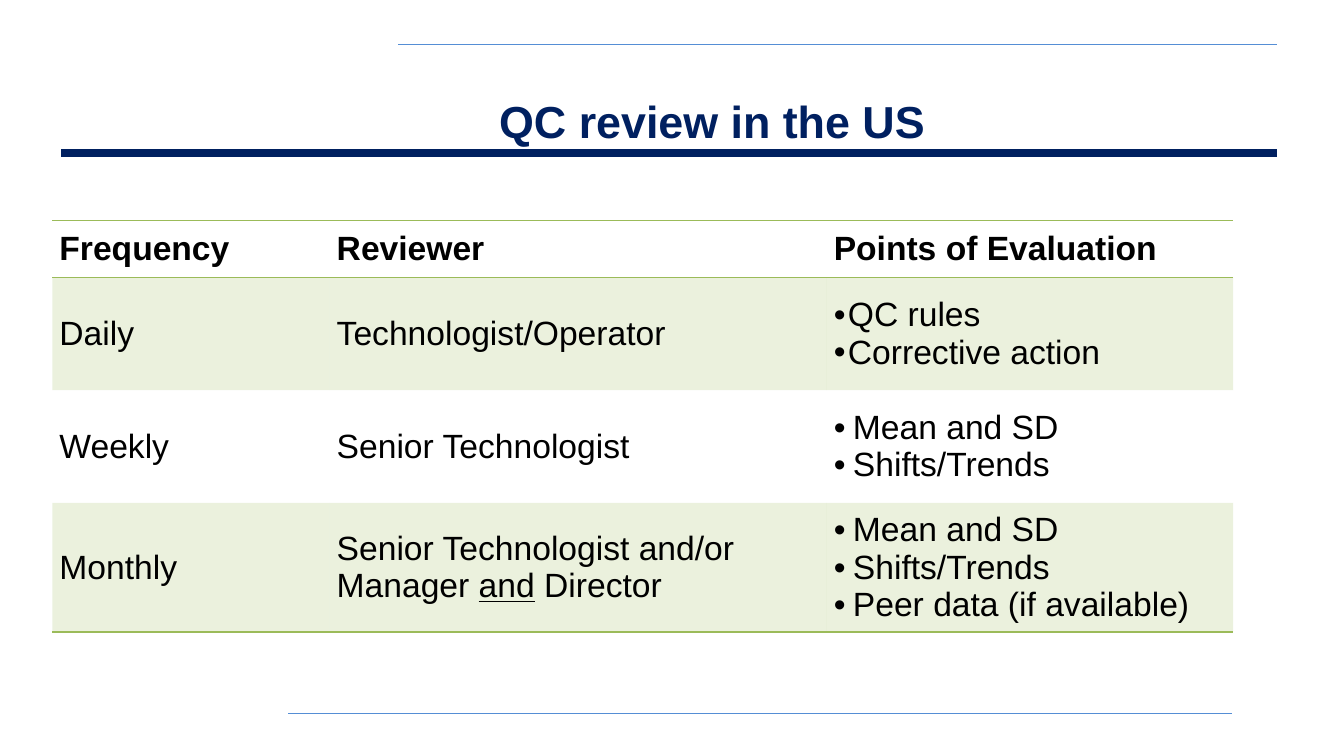
import pptx
import pptx.util
import pptx.dml.color
import pptx.enum.shapes
import pptx.enum.text
import pptx.oxml
import pptx.oxml.ns
import lxml.etree

Inches = pptx.util.Inches
Pt = pptx.util.Pt
qn = pptx.oxml.ns.qn
MIDDLE = pptx.enum.text.MSO_ANCHOR.MIDDLE
GREEN = "9BBB59"


def color(code):
    return pptx.dml.color.RGBColor.from_string(code)


def style(run, size, code, bold, under=False):
    form = {"name": "Arial", "size": Pt(size), "bold": bold, "underline": under}
    for key, value in form.items():
        setattr(run.font, key, value)
    run.font.color.rgb = color(code)


deck = pptx.Presentation()
deck.slide_width = Inches(13.33)
deck.slide_height = Inches(7.5)
slide = deck.slides.add_slide(deck.slide_layouts[6])

# Rules: left, right, height, colour, width
rules = [
    (2.86, 12.22, 7.08, "558ED5", 0.5),
    (3.95, 12.67, 0.44, "558ED5", 0.5),
    (0.61, 12.67, 1.52, "002060", 6),
]
for left, right, y, code, width in rules:
    rule = slide.shapes.add_connector(
        pptx.enum.shapes.MSO_CONNECTOR.STRAIGHT,
        Inches(left), Inches(y), Inches(right), Inches(y))
    rule.line.color.rgb = color(code)
    rule.line.width = Pt(width)
    lxml.etree.SubElement(rule._element.spPr, qn("a:effectLst"))

# Title
box = slide.shapes.add_textbox(Inches(3.1), Inches(0.83), Inches(7.93), Inches(0.82))
frame = box.text_frame
frame.word_wrap = True
frame.margin_top = Inches(0.1)
title = frame.paragraphs[0]
title.alignment = pptx.enum.text.PP_ALIGN.CENTER
run = title.add_run()
run.text = "QC review in the US"
style(run, 32, "002060", True)

# Table text: one list per cell in the last column, _ marks underlining
rows = [
    ("Frequency", "Reviewer", ["Points of Evaluation"]),
    ("Daily", "Technologist/Operator", ["QC rules", "Corrective action"]),
    ("Weekly", "Senior Technologist", ["Mean and SD", "Shifts/Trends"]),
    ("Monthly", "Senior Technologist and/or Manager _and_ Director",
     ["Mean and SD", "Shifts/Trends", "Peer data (if available)"]),
]
widths = [2.75, 4.93, 4.03]
heights = [0.56, 1.12, 1.12, 1.15]
indents = [0, 0.14, 0.19, 0.19]
edges = {0: ["lnT", "lnB"], 3: ["lnB"]}

# Table grid, without the banded style
table = slide.shapes.add_table(
    len(rows), len(widths), Inches(0.52), Inches(2.19),
    Inches(sum(widths)), Inches(sum(heights))).table
table.first_row = True
table.horz_banding = False
table._tbl.tblPr.find(qn("a:tableStyleId")).text = "{2D5ABB26-0587-4C30-8999-92F81FD0307C}"
for column, width in zip(table.columns, widths):
    column.width = Inches(width)
for row, height in zip(table.rows, heights):
    row.height = Inches(height)

for r, row in enumerate(rows):
    for c, text in enumerate(row):
        cell = table.cell(r, c)
        cell.vertical_anchor = MIDDLE
        for side, gap in {"left": 0.07, "right": 0.07, "top": 0.04, "bottom": 0.04}.items():
            setattr(cell, "margin_" + side, Inches(gap))

        # Tint on every second row
        if r % 2:
            cell.fill.solid()
            cell.fill.fore_color.rgb = color(GREEN)
            tint = cell._tc.tcPr.find(".//" + qn("a:srgbClr"))
            lxml.etree.SubElement(tint, qn("a:alpha")).set("val", "20000")
        else:
            cell.fill.background()

        # Borders
        for spot, edge in enumerate(edges.get(r, [])):
            cell._tc.tcPr.insert(spot, pptx.oxml.parse_xml(
                f'<a:{edge} {pptx.oxml.ns.nsdecls("a")} w="12700"><a:solidFill>'
                f'<a:srgbClr val="{GREEN}"/></a:solidFill></a:{edge}>'))

        # Words and bullets
        items = text if c == 2 else [text]
        for i, item in enumerate(items):
            para = cell.text_frame.add_paragraph() if i else cell.text_frame.paragraphs[0]
            if c == 2 and r:
                props = para._p.get_or_add_pPr()
                props.set("marL", str(Inches(indents[r])))
                props.set("indent", str(-Inches(indents[r])))
                lxml.etree.SubElement(props, qn("a:buFont")).set("typeface", "Arial")
                lxml.etree.SubElement(props, qn("a:buChar")).set("char", "•")
            for n, part in enumerate(item.split("_")):
                run = para.add_run()
                run.text = part
                style(run, 24, "000000", r == 0, n % 2 == 1)

deck.save("out.pptx")
